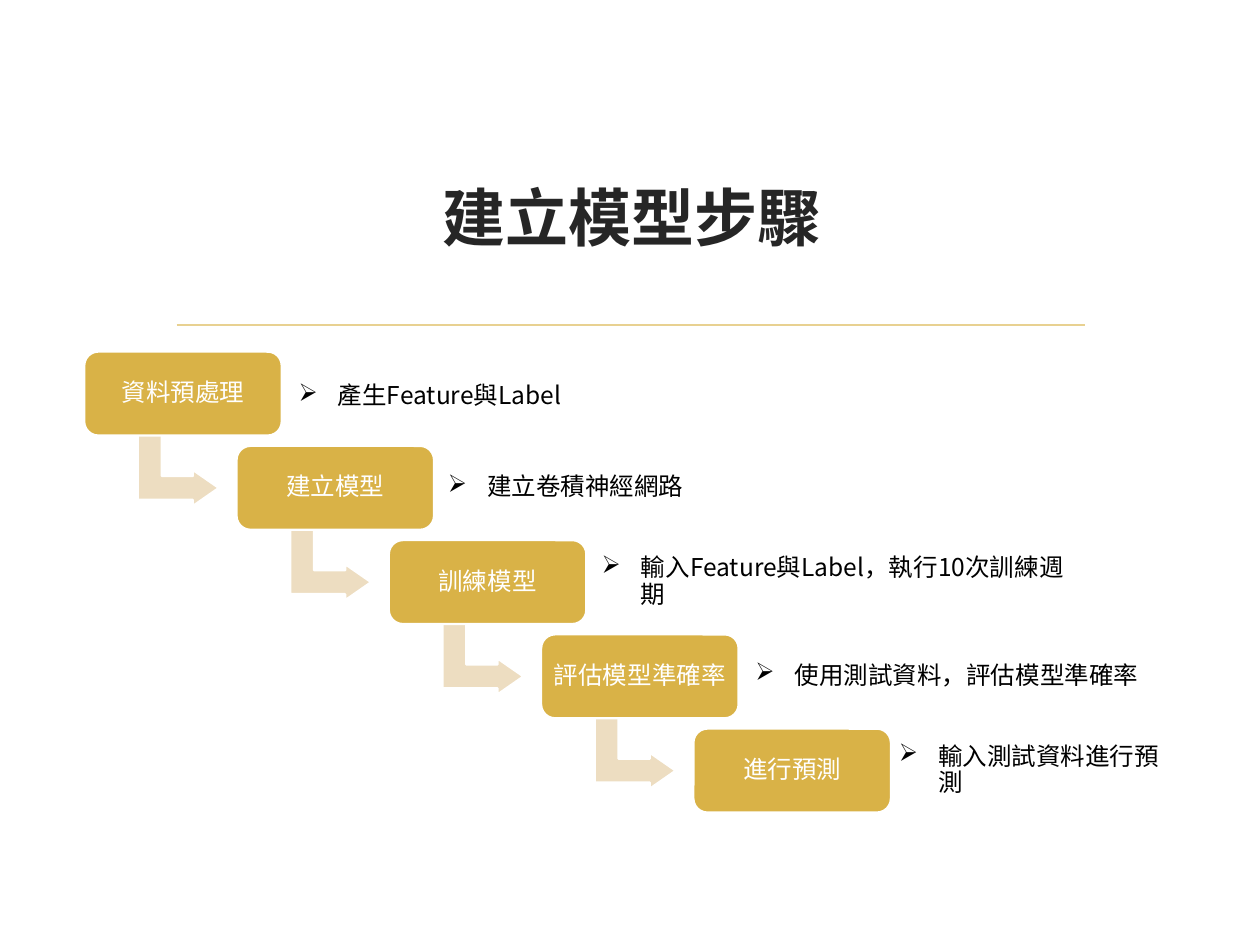
from dataclasses import dataclass
from pptx import Presentation
from pptx.dml.color import RGBColor as RGB
from pptx.enum.shapes import MSO_CONNECTOR as Link, MSO_SHAPE as Kind
from pptx.enum.text import MSO_ANCHOR as Anchor, PP_ALIGN as Align
from pptx.oxml.ns import qn
from pptx.util import Cm, Pt
from lxml.etree import SubElement


@dataclass(frozen=True)
class Theme:
    font: str = "Noto Sans CJK SC"
    ink: str = "262626"
    note: str = "000000"
    white: str = "FFFFFF"
    gold: str = "D9B247"
    sand: str = "EDDDC1"
    rule: str = "E8D191"
    head: float = 36
    body: float = 14
    line: float = 1.25


THEME = Theme()

# label, note, gap from step to note, note top, note width, note inset (cm)
STEPS = [
    ("資料預處理", "產生Feature與Label", 0.19, 0.23, 5.61, 0.15),
    ("建立模型", "建立卷積神經網路", 0.13, 0.16, 6.58, 0.15),
    ("訓練模型", "輸入Feature與Label，執行10次訓練週期", 0.16, 0.16, 10.08, 0.15),
    ("評估模型準確率", "使用測試資料，評估模型準確率", 0.19, 0.16, 8.2, 0.15),
    ("進行預測", "輸入測試資料進行預測", -0.02, 0.16, 6.05, 0.18),
]


def style(para, size, color, bold=False):
    font = para.font
    font.size, font.bold, font.name = Pt(size), bold, THEME.font
    font.color.rgb = RGB.from_string(color)
    props = para._p.pPr.find(qn("a:defRPr"))
    SubElement(props, qn("a:ea"), typeface=THEME.font)


def fit(frame, inset):
    frame.word_wrap = True
    frame.vertical_anchor = Anchor.MIDDLE
    frame.margin_left = frame.margin_right = Cm(inset)
    frame.margin_top = frame.margin_bottom = Cm(inset)


def paint(shape, color):
    shape.shadow.inherit = False
    shape.fill.solid()
    shape.fill.fore_color.rgb = RGB.from_string(color)
    shape.line.color.rgb = RGB.from_string(THEME.white)
    shape.line.width = Pt(THEME.line)


def add_head(slide, x, y, w, h):
    """Place the title and the rule below it."""
    title = slide.shapes.title
    title.left, title.top, title.width, title.height = map(Cm, (x, y, w, h))
    title.text = "建立模型步驟"
    title.text_frame.vertical_anchor = Anchor.MIDDLE
    para = title.text_frame.paragraphs[0]
    para.alignment = Align.CENTER
    style(para, THEME.head, THEME.ink, True)

    low = Cm(y + h + 0.38)
    rule = slide.shapes.add_connector(
        Link.STRAIGHT, Cm(x + 0.28), low, Cm(x + w - 0.3), low)
    rule.line.color.rgb = RGB.from_string(THEME.rule)
    rule.line.width = Pt(THEME.line)
    SubElement(rule._element.spPr, qn("a:effectLst"))


def add_arrow(slide, x, y, w, h):
    arrow = slide.shapes.add_shape(
        Kind.BENT_UP_ARROW, Cm(x), Cm(y), Cm(w), Cm(h))
    arrow.rotation = 90
    for i, value in enumerate((0.33, 0.25, 0.36)):
        arrow.adjustments[i] = value
    paint(arrow, THEME.sand)


def add_step(slide, x, y, w, h, label):
    step = slide.shapes.add_shape(
        Kind.ROUNDED_RECTANGLE, Cm(x), Cm(y), Cm(w), Cm(h))
    paint(step, THEME.gold)
    fit(step.text_frame, 0.15)
    para = step.text_frame.paragraphs[0]
    para.text = label
    para.alignment = Align.CENTER
    para.line_spacing, para.space_after = 0.9, Pt(5)
    style(para, THEME.body, THEME.white)


def add_note(slide, x, y, w, h, text, inset):
    frame = slide.shapes.add_textbox(Cm(x), Cm(y), Cm(w), Cm(h)).text_frame
    fit(frame, inset)
    para = frame.paragraphs[0]
    para.text = text
    para.level = 1
    props = para._p.get_or_add_pPr()
    props.set("marL", str(Cm(0.79)))
    props.set("indent", str(-Cm(0.79)))
    SubElement(props, qn("a:buChar"), char="➢")
    para.line_spacing, para.space_after = 0.9, Pt(2)
    style(para, THEME.body, THEME.note)


def add_stairs(slide, x, y, w, h):
    """Run the steps down from the top left corner x, y; w, h is one step."""
    for i, (label, text, gap, drop, wide, inset) in enumerate(STEPS):
        left, top = x + 3.07 * i, y + 1.9 * i
        if i < len(STEPS) - 1:
            add_arrow(slide, left + 1.17, top + 1.57, 1.45, 1.63)
        add_step(slide, left, top, w, h, label)
        add_note(slide, left + w + gap, top + drop, wide, 1.37, text, inset)


def main():
    deck = Presentation()
    deck.slide_width, deck.slide_height = Cm(25.4), Cm(19.05)
    slide = deck.slides.add_slide(deck.slide_layouts[5])
    add_head(slide, 3.28, 2.54, 18.9, 3.63)
    add_stairs(slide, 1.7, 7.09, 3.98, 1.69)
    deck.save("out.pptx")


if __name__ == "__main__":
    main()
